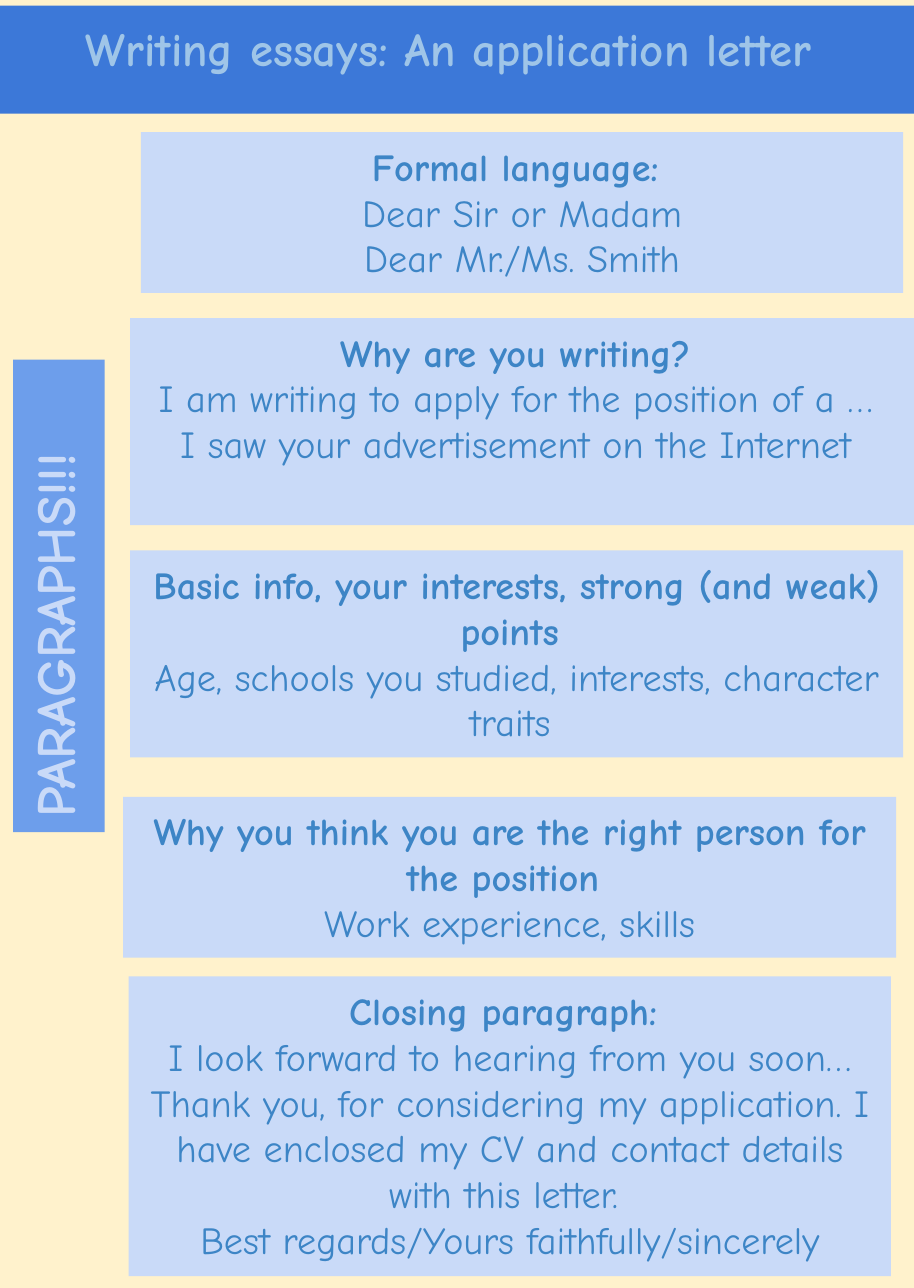
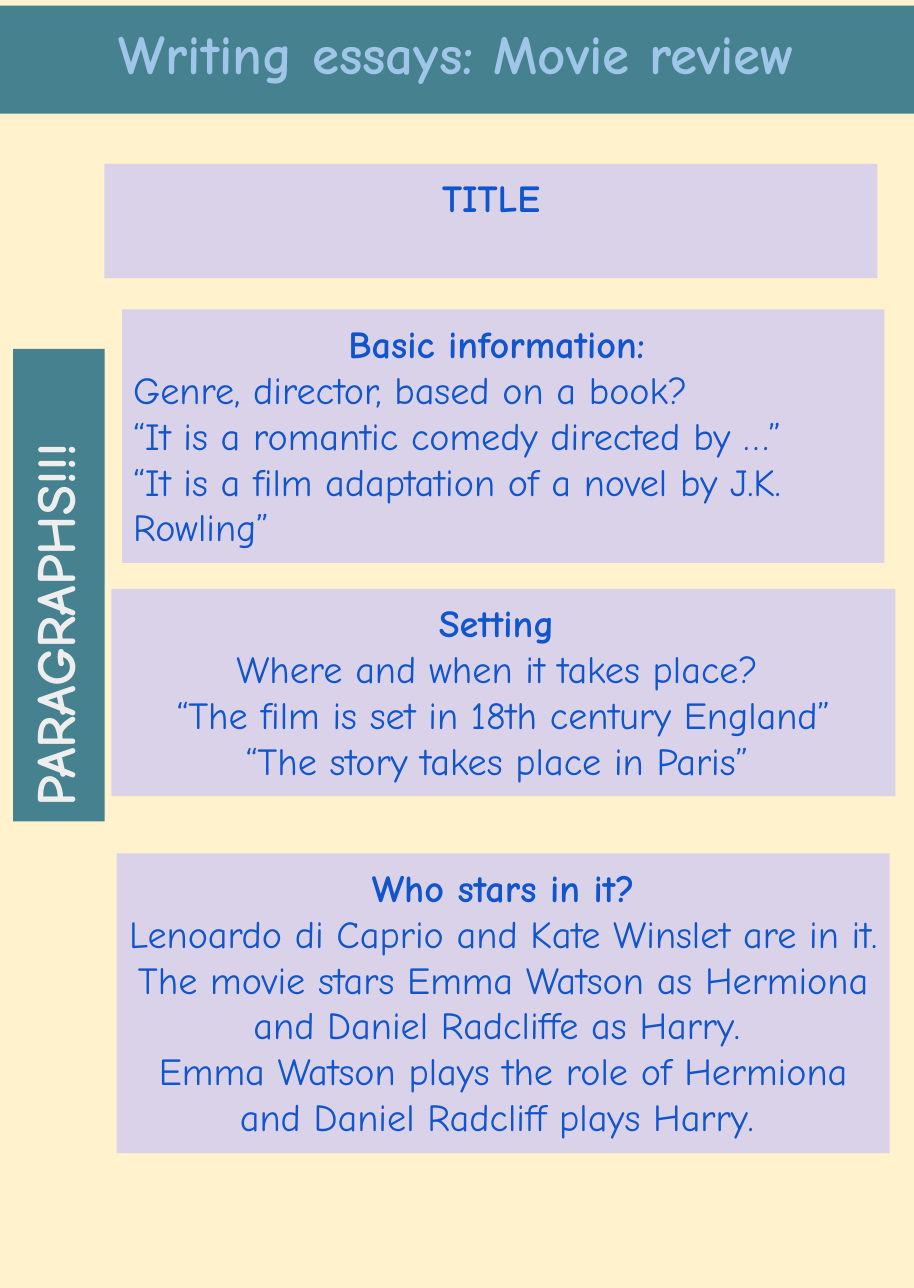
import pptx
import pptx.util
import pptx.dml.color
import pptx.enum.text

Cm = pptx.util.Cm
Pt = pptx.util.Pt
RGBColor = pptx.dml.color.RGBColor
ALIGN = pptx.enum.text.PP_ALIGN

CREAM = RGBColor(0xFF, 0xF2, 0xCC)
ROYAL_BLUE = RGBColor(0x3C, 0x78, 0xD8)
CORNFLOWER = RGBColor(0x6D, 0x9E, 0xEB)
PALE_BLUE = RGBColor(0xC9, 0xDA, 0xF8)
SKY_BLUE = RGBColor(0x9F, 0xC5, 0xE8)
STEEL_BLUE = RGBColor(0x3D, 0x85, 0xC6)
TEAL = RGBColor(0x45, 0x81, 0x8E)
LILAC = RGBColor(0xD9, 0xD2, 0xE9)
DEEP_BLUE = RGBColor(0x11, 0x55, 0xCC)
LIGHT_GREY = RGBColor(0xEE, 0xEE, 0xEE)

FONT = "Comic Neue"
WIDTH, HEIGHT = 21.08, 29.72
NARROW, MEDIUM, WIDE = 17.58, 17.83, 18.08


class Deck:
    def __init__(self):
        self.prs = pptx.Presentation()
        self.prs.slide_width = Cm(WIDTH)
        self.prs.slide_height = Cm(HEIGHT)

    def slide(self, box_fill, text_color):
        self.s = self.prs.slides.add_slide(self.prs.slide_layouts[0])
        fill = self.s.background.fill
        fill.solid()
        fill.fore_color.rgb = CREAM
        self.box_fill = box_fill
        self.text_color = text_color

    def frame(self, sp, left, top, width, height, color, inset):
        sp.left, sp.top = Cm(left), Cm(top)
        sp.width, sp.height = Cm(width), Cm(height)
        sp.fill.solid()
        sp.fill.fore_color.rgb = color
        tf = sp.text_frame
        tf.word_wrap = True
        tf.auto_size = pptx.enum.text.MSO_AUTO_SIZE.NONE
        tf.vertical_anchor = pptx.enum.text.MSO_ANCHOR.TOP
        tf.margin_left = tf.margin_right = Cm(inset)
        tf.margin_top = tf.margin_bottom = Cm(inset)
        return tf

    def format(self, p, size, color, bold=True, align=ALIGN.CENTER, spacing=1.0):
        p.alignment = align
        p.line_spacing = spacing
        p.space_before = Pt(0)
        p.font.name = FONT
        p.font.size = Pt(size)
        p.font.bold = bold
        p.font.color.rgb = color

    def banner(self, text, fill, size):
        tf = self.frame(self.s.shapes.title, 0, 0.13, WIDTH, 2.49, fill, 0.33)
        tf.text = text
        self.format(tf.paragraphs[0], size, SKY_BLUE)

    def sidebar(self, middle, fill, color):
        length, thickness, center = 10.9, 2.11, 1.36
        sp = self.s.placeholders[1]
        tf = self.frame(sp, center - length / 2, middle - thickness / 2,
                        length, thickness, fill, 0.33)
        sp.rotation = 270
        tf.text = "PARAGRAPHS!!!"
        self.format(tf.paragraphs[0], 36, color, align=ALIGN.LEFT, spacing=0.9)

    def box(self, left, top, width, rows, heading, lines=(), align=ALIGN.CENTER):
        sp = self.s.shapes.add_textbox(0, 0, 0, 0)
        tf = self.frame(sp, left, top, width, 0.5 + 1.07 * rows, self.box_fill, 0.25)
        tf.text = heading
        self.format(tf.paragraphs[0], 25, self.text_color)
        for line in lines:
            p = tf.add_paragraph()
            p.text = line
            self.format(p, 25, self.text_color, False, align)


def application_letter(deck):
    deck.slide(PALE_BLUE, STEEL_BLUE)
    deck.banner("Writing essays: An application letter ", ROYAL_BLUE, 30.6)
    deck.box(3.25, 3.05, NARROW, 3, "Formal language: ",
             ["Dear Sir or Madam", "Dear Mr./Ms. Smith"])
    deck.box(3, 7.34, WIDE, 4, "Why are you writing? ",
             ["I am writing to apply for the position of a … ",
              "I saw your advertisement on the Internet "])
    deck.box(3, 12.7, MEDIUM, 4,
             "Basic info, your interests, strong (and weak) points ",
             ["Age, schools you studied, interests, character traits "])
    deck.box(2.84, 18.39, MEDIUM, 3,
             "Why you think you are the right person for the position ",
             ["Work experience, skills"])
    deck.box(2.97, 22.53, NARROW, 6, "Closing paragraph: ",
             ["I look forward to hearing from you soon…",
              "Thank you, for considering my application. I have enclosed "
              "my CV and contact details with this letter. ",
              "Best regards/Yours faithfully/sincerely"])
    deck.sidebar(13.75, CORNFLOWER, PALE_BLUE)


def movie_review(deck):
    deck.slide(LILAC, DEEP_BLUE)
    deck.banner("Writing essays: Movie review", TEAL, 36)
    deck.box(2.41, 3.78, MEDIUM, 2, "TITLE")
    deck.box(2.82, 7.14, NARROW, 5, "Basic information: ",
             ["Genre, director, based on a book?",
              "“It is a romantic comedy directed by …”",
              "“It is a film adaptation of a novel by J.K. Rowling”"],
             ALIGN.LEFT)
    deck.box(2.57, 13.59, WIDE, 4, "Setting ",
             ["Where and when it takes place? ",
              "“The film is set in 18th century England”",
              "“The story takes place in Paris” "])
    deck.box(2.69, 19.69, MEDIUM, 6, "Who stars in it?",
             ["Lenoardo di Caprio and Kate Winslet are in it. The movie stars "
              "Emma Watson as Hermiona and Daniel Radcliffe as Harry. ",
              "Emma Watson plays the role of Hermiona and Daniel Radcliff "
              "plays Harry. "])
    deck.sidebar(13.5, TEAL, LIGHT_GREY)


def main():
    deck = Deck()
    application_letter(deck)
    movie_review(deck)
    deck.prs.save("out.pptx")


if __name__ == "__main__":
    main()
